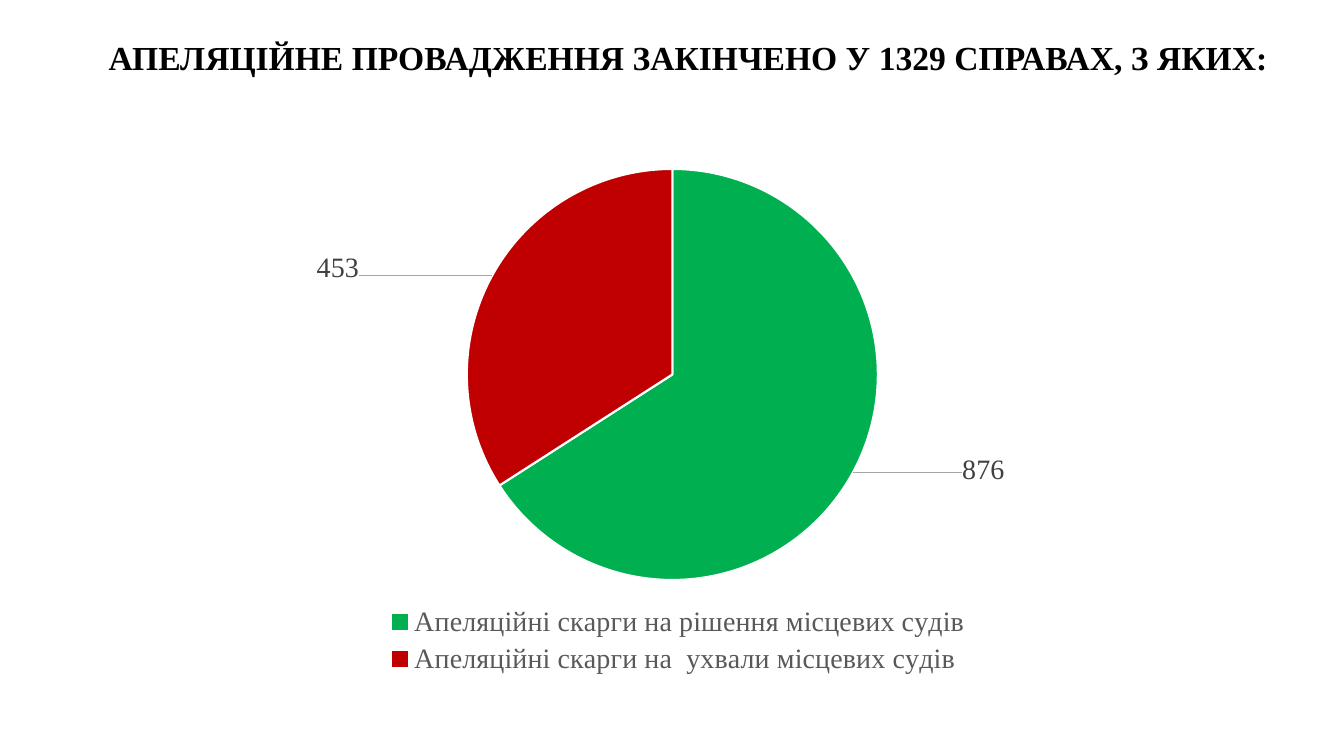
from lxml import etree
from pptx import Presentation
from pptx.chart.data import CategoryChartData
from pptx.dml.color import RGBColor
from pptx.enum.chart import XL_CHART_TYPE, XL_LABEL_POSITION, XL_LEGEND_POSITION
from pptx.enum.text import MSO_ANCHOR, MSO_AUTO_SIZE, PP_ALIGN
from pptx.oxml import parse_xml
from pptx.oxml.ns import nsdecls, qn
from pptx.util import Cm, Pt

BLACK = RGBColor(0x00, 0x00, 0x00)
WHITE = RGBColor(0xFF, 0xFF, 0xFF)
GREEN = RGBColor(0x00, 0xB0, 0x50)
RED = RGBColor(0xC0, 0x00, 0x00)
LABEL_GREY = RGBColor(0x40, 0x40, 0x40)
LEGEND_GREY = RGBColor(0x59, 0x59, 0x59)
SERIF = "Times New Roman"

# Category, value, slice colour, label shift as a share of the chart
APPEALS = [
    ("Апеляційні скарги на рішення місцевих судів", 876, GREEN, (0.09, -0.04)),
    ("Апеляційні скарги на  ухвали місцевих судів", 453, RED, (-0.11, 0.02)),
]


def style_font(font, size, color, name=SERIF, bold=False):
    font.name = name
    font.size = Pt(size)
    font.bold = bold
    font.color.rgb = color


def manual_layout(**settings):
    """Build a chart layout element from its settings, in schema order."""
    layout = parse_xml(f"<c:layout {nsdecls('c')}><c:manualLayout/></c:layout>")
    for tag, value in settings.items():
        etree.SubElement(layout[0], qn(f"c:{tag}")).set("val", str(value))
    return layout


def replace_layout(element, layout, index):
    for old in element.findall(qn("c:layout")):
        element.remove(old)
    element.insert(index, layout)


def add_title(page, left, top, width, height):
    title = page.shapes.title
    title.left, title.top, title.width, title.height = left, top, width, height
    frame = title.text_frame
    frame.text = "АПЕЛЯЦІЙНЕ ПРОВАДЖЕННЯ ЗАКІНЧЕНО У 1329 СПРАВАХ, З ЯКИХ:"
    frame.word_wrap = False
    frame.auto_size = MSO_AUTO_SIZE.NONE
    frame.vertical_anchor = MSO_ANCHOR.MIDDLE
    para = frame.paragraphs[0]
    para.alignment = PP_ALIGN.CENTER
    style_font(para.font, 24, BLACK, bold=True)


def add_slices(series):
    labels = series.data_labels
    labels.show_value = True
    labels.position = XL_LABEL_POSITION.OUTSIDE_END
    style_font(labels.font, 20, LABEL_GREY)
    for index, (_, _, color, (shift_x, shift_y)) in enumerate(APPEALS):
        point = series.points[index]
        point.format.fill.solid()
        point.format.fill.fore_color.rgb = color
        point.format.line.color.rgb = WHITE
        point.format.line.width = Pt(1.5)
        label = point.data_label
        label.position = XL_LABEL_POSITION.OUTSIDE_END
        style_font(label.font, 20, LABEL_GREY)

    # Shift the labels outwards and join them to their slices
    group = series._element.find(qn("c:dLbls"))
    for label, appeal in zip(group.findall(qn("c:dLbl")), APPEALS):
        shift_x, shift_y = appeal[3]
        replace_layout(label, manual_layout(x=shift_x, y=shift_y), 1)
    switch = group.find(qn("c:showLeaderLines"))
    if switch is None:
        switch = etree.SubElement(group, qn("c:showLeaderLines"))
    switch.set("val", "1")
    switch.addnext(parse_xml(
        f"<c:leaderLines {nsdecls('c', 'a')}><c:spPr><a:ln w='9525'><a:solidFill>"
        "<a:srgbClr val='A6A6A6'/></a:solidFill></a:ln></c:spPr></c:leaderLines>"))


def add_appeals_chart(page, left, top, width, height):
    data = CategoryChartData()
    data.categories = [appeal[0] for appeal in APPEALS]
    data.add_series("Series 1", [appeal[1] for appeal in APPEALS])
    chart = page.shapes.add_chart(
        XL_CHART_TYPE.PIE, left, top, width, height, data).chart
    chart.has_title = False
    style_font(chart.font, 10, BLACK, "Calibri")
    plot = chart.plots[0]
    plot.vary_by_categories = True
    add_slices(plot.series[0])

    # Legend in two rows below the pie
    chart.has_legend = True
    legend = chart.legend
    legend.position = XL_LEGEND_POSITION.BOTTOM
    legend.include_in_layout = False
    style_font(legend.font, 20, LEGEND_GREY)
    replace_layout(legend._element, manual_layout(
        xMode="edge", yMode="edge", x=0.25, y=0.85, w=0.51, h=0.15), 1)
    plot_area = chart._chartSpace.chart.plotArea
    replace_layout(plot_area, manual_layout(
        layoutTarget="inner", xMode="edge", yMode="edge",
        x=0.32, y=0.03, w=0.36, h=0.78), 0)


def main():
    deck = Presentation()
    deck.slide_width, deck.slide_height = Cm(33.87), Cm(19.05)
    page = deck.slides.add_slide(deck.slide_layouts[5])
    add_title(page, Cm(2.34), Cm(0.79), Cm(30), Cm(1.27))
    add_appeals_chart(page, Cm(2.34), Cm(3.86), Cm(29.21), Cm(13.28))
    deck.save("out.pptx")


if __name__ == "__main__":
    main()
